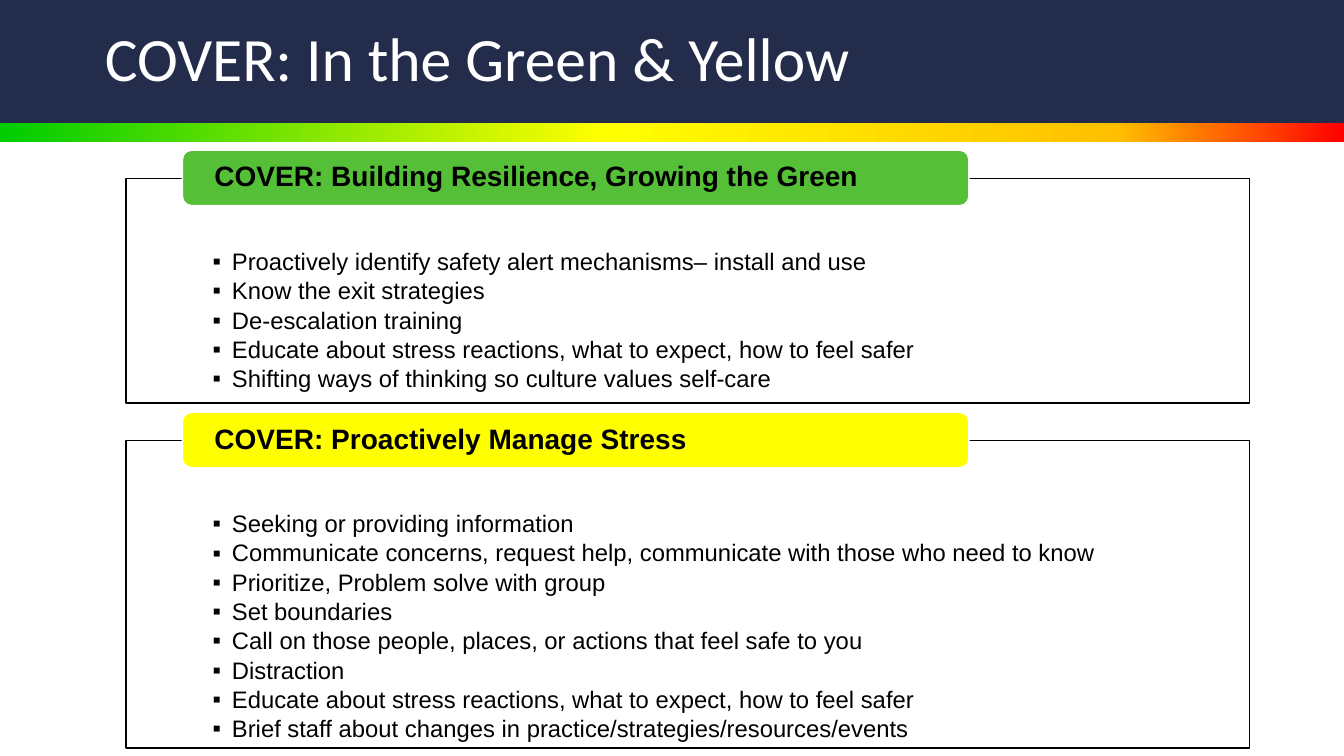
from lxml.etree import SubElement
from pptx import Presentation
from pptx.dml.color import RGBColor
from pptx.enum.shapes import MSO_SHAPE
from pptx.enum.text import MSO_ANCHOR, MSO_AUTO_SIZE, PP_ALIGN
from pptx.oxml.ns import qn
from pptx.util import Inches, Pt

NAVY = RGBColor(0x23, 0x2D, 0x4B)
WHITE = RGBColor(0xFF, 0xFF, 0xFF)
BLACK = RGBColor(0x00, 0x00, 0x00)
GREEN = RGBColor(0x54, 0xBF, 0x37)
YELLOW = RGBColor(0xFF, 0xFF, 0x00)
STRIPE_STOPS = [
    (0, RGBColor(0x00, 0xCC, 0x00)),
    (45, YELLOW),
    (83, RGBColor(0xFF, 0xC0, 0x00)),
    (100, RGBColor(0xFF, 0x00, 0x00)),
]

SLIDE_WIDTH, SLIDE_HEIGHT = 13.33, 7.5
PANEL_LEFT, PANEL_WIDTH = 1.25, 11.14

# Heading, tab colour, panel top, panel height, bullets
SECTIONS = [
    ("COVER: Building Resilience, Growing the Green", GREEN, 1.77, 2.23, [
        "Proactively identify safety alert mechanisms– install and use",
        "Know the exit strategies",
        "De-escalation training",
        "Educate about stress reactions, what to expect, how to feel safer",
        "Shifting ways of thinking so culture values self-care",
    ]),
    ("COVER: Proactively Manage Stress", YELLOW, 4.37, 3.05, [
        "Seeking or providing information",
        "Communicate concerns, request help, communicate with those who need to know",
        "Prioritize, Problem solve with group",
        "Set boundaries",
        "Call on those people, places, or actions that feel safe to you",
        "Distraction",
        "Educate about stress reactions, what to expect, how to feel safer",
        "Brief staff about changes in practice/strategies/resources/events",
    ]),
]


def place(shape, left, top, width, height):
    shape.left, shape.top = Inches(left), Inches(top)
    shape.width, shape.height = Inches(width), Inches(height)


def add_box(slide, preset, left, top, width, height):
    shape = slide.shapes.add_shape(
        preset, Inches(left), Inches(top), Inches(width), Inches(height))
    shape.shadow.inherit = False
    return shape


def set_frame(frame, anchor, left, top, right, bottom):
    frame.word_wrap = True
    frame.auto_size = MSO_AUTO_SIZE.NONE
    frame.vertical_anchor = anchor
    frame.margin_left, frame.margin_right = Inches(left), Inches(right)
    frame.margin_top, frame.margin_bottom = Inches(top), Inches(bottom)


def add_text(paragraph, text, font_name, size, color, bold=False):
    paragraph.alignment = PP_ALIGN.LEFT
    paragraph.line_spacing = 0.9
    paragraph.space_before = Pt(0)
    run = paragraph.add_run()
    run.text = text
    run.font.name, run.font.size, run.font.bold = font_name, Pt(size), bold
    run.font.color.rgb = color


def add_bullet(paragraph):
    properties = paragraph._p.get_or_add_pPr()
    properties.set("marL", str(Inches(0.19)))
    properties.set("indent", str(-Inches(0.19)))
    SubElement(properties, qn("a:buFont")).set("typeface", "Arial")
    SubElement(properties, qn("a:buChar")).set("char", "▪")


def fill_gradient(shape, stops):
    shape.fill.gradient()
    shape.fill.gradient_angle = 0
    stop_list = shape.fill._fill._gradFill.find(qn("a:gsLst"))
    for stop in list(stop_list):
        stop_list.remove(stop)
    for percent, color in stops:
        stop = SubElement(stop_list, qn("a:gs"))
        stop.set("pos", str(percent * 1000))
        SubElement(stop, qn("a:srgbClr")).set("val", str(color))


def build_header(slide, text, left, top, width, height):
    # Gradient stripe below the navy band
    stripe = add_box(slide, MSO_SHAPE.RECTANGLE, left, top + height, width, 0.19)
    fill_gradient(stripe, STRIPE_STOPS)
    band = add_box(slide, MSO_SHAPE.RECTANGLE, left, top, width, height)
    band.fill.solid()
    band.fill.fore_color.rgb = NAVY
    for shape in (band, stripe):
        shape.line.fill.background()
        slide.shapes._spTree.insert(2, shape._element)  # behind the title

    # Title
    title = slide.shapes.title
    place(title, left + 0.94, top + 0.06, 11.56, 1.1)
    set_frame(title.text_frame, MSO_ANCHOR.MIDDLE, 0.1, 0.05, 0.1, 0.05)
    add_text(title.text_frame.paragraphs[0], text, "Calibri", 44, WHITE)


def build_section(slide, body, heading, color, bullets, left, top, width, height):
    # Outlined panel with the bullet list
    place(body, left, top, width, height)
    body.fill.solid()
    body.fill.fore_color.rgb = WHITE
    body.line.color.rgb = BLACK
    body.line.width = Pt(1)
    frame = body.text_frame
    set_frame(frame, MSO_ANCHOR.TOP, 0.86, 0.71, 0.86, 0)
    for index, text in enumerate(bullets):
        paragraph = frame.add_paragraph() if index else frame.paragraphs[0]
        add_bullet(paragraph)
        add_text(paragraph, text, "Arial", 17, BLACK)
        paragraph.space_after = Pt(2.55)

    # Heading tab across the panel's top edge
    tab = add_box(slide, MSO_SHAPE.ROUNDED_RECTANGLE, left + 0.56, top - 0.28, 7.8, 0.55)
    tab.fill.solid()
    tab.fill.fore_color.rgb = color
    tab.line.color.rgb = WHITE
    tab.line.width = Pt(1)
    set_frame(tab.text_frame, MSO_ANCHOR.MIDDLE, 0.29, 0, 0.29, 0)
    add_text(tab.text_frame.paragraphs[0], heading, "Arial", 20, BLACK, bold=True)


def main():
    presentation = Presentation()
    presentation.slide_width = Inches(SLIDE_WIDTH)
    presentation.slide_height = Inches(SLIDE_HEIGHT)
    two_content = presentation.slide_layouts[3]
    slide = presentation.slides.add_slide(two_content)

    build_header(slide, "COVER: In the Green & Yellow", 0, 0, SLIDE_WIDTH, 1.22)
    bodies = [slide.placeholders[1], slide.placeholders[2]]
    for body, (heading, color, top, height, bullets) in zip(bodies, SECTIONS):
        build_section(slide, body, heading, color, bullets,
                      PANEL_LEFT, top, PANEL_WIDTH, height)
    presentation.save("out.pptx")


if __name__ == "__main__":
    main()
